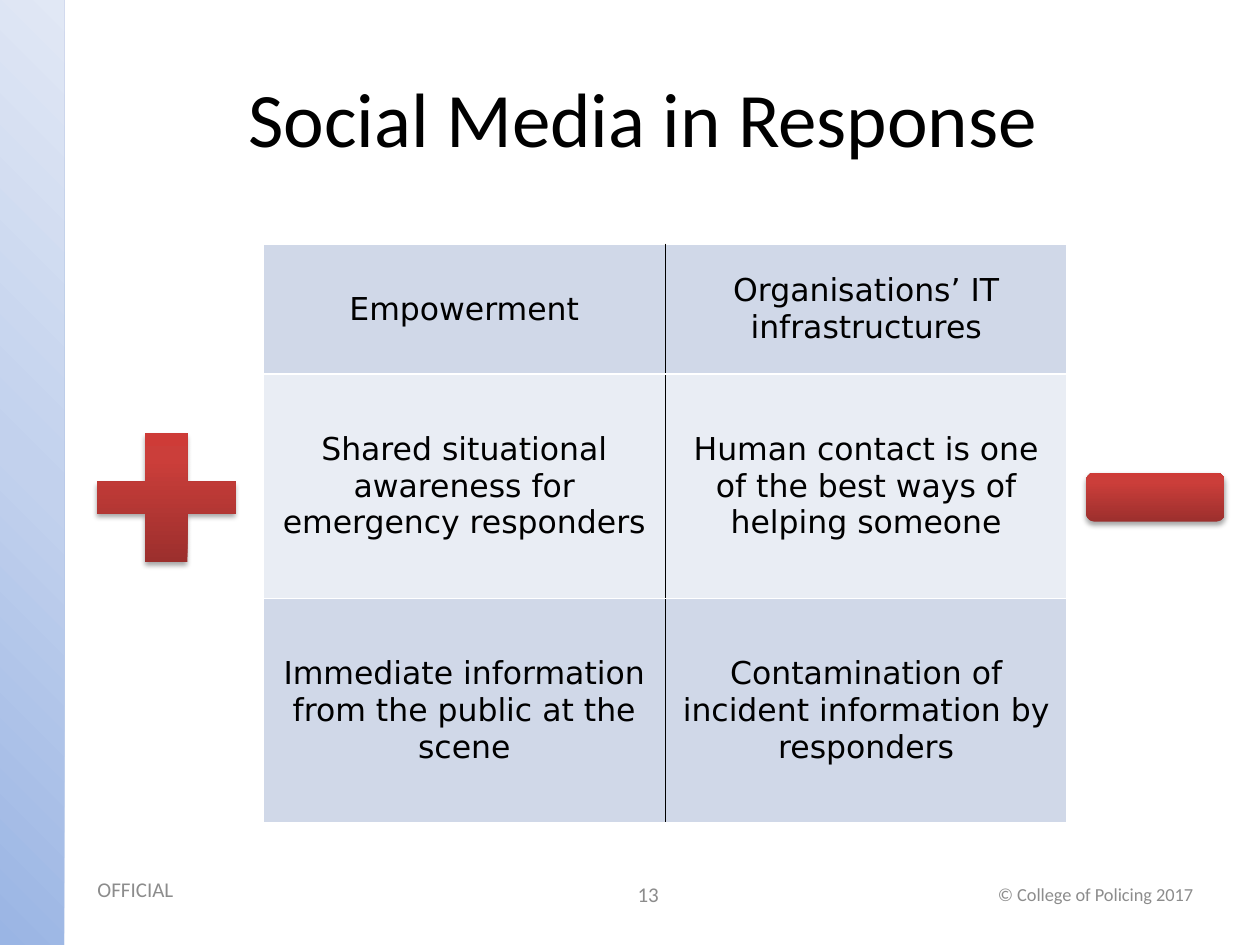
from lxml import etree
from pptx import Presentation
from pptx.dml.color import RGBColor
from pptx.enum.shapes import MSO_SHAPE as Shape
from pptx.enum.text import MSO_ANCHOR as Anchor, PP_ALIGN as Align
from pptx.oxml.ns import qn
from pptx.util import Inches, Pt

COLOURS = {
    "text": "000000", "footer": "8C8C8C", "rule": "000000", "grid": "FFFFFF",
    "row_dark": "D0D8E8", "row_light": "E9EDF4", "shadow": "000000",
}
BAND_STOPS = [(0, "9AB5E4"), (50, "C2D1ED"), (100, "E1E8F5")]
SIGN_STOPS = [(0, "9C2F2D"), (80, "CB3E3A"), (100, "CE3B37")]
ROWS = [
    ("Empowerment", "Organisations’ IT infrastructures"),
    ("Shared situational awareness for emergency responders",
     "Human contact is one of the best ways of helping someone"),
    ("Immediate information from the public at the scene",
     "Contamination of incident information by responders"),
]
ROW_HEIGHTS = [1.03, 1.78, 1.78]


def lengths(box):
    return [Inches(value) for value in box]


def write(frame, text, size, font="Calibri", colour="text", align=Align.CENTER):
    para = frame.paragraphs[0]
    para.alignment = align
    span = para.add_run()
    span.text = text
    span.font.size = Pt(size)
    span.font.name = font
    span.font.color.rgb = RGBColor.from_string(COLOURS[colour])


def add_colour(parent, colour):
    return etree.SubElement(parent, qn("a:srgbClr"), val=colour)


def add_gradient_shape(page, kind, box, stops, angle):
    shape = page.shapes.add_shape(kind, *lengths(box))
    shape.shadow.inherit = False
    shape.line.fill.background()
    shape.fill.gradient()
    shape.fill.gradient_angle = angle
    stop_list = shape._element.spPr.find(".//" + qn("a:gsLst"))
    for stop in list(stop_list):
        stop_list.remove(stop)
    for position, colour in stops:
        stop = etree.SubElement(stop_list, qn("a:gs"), pos=str(position * 1000))
        add_colour(stop, colour)
    return shape


def add_sign(page, kind, box):
    """Draw a red plus or minus with a soft shadow below it."""
    sign = add_gradient_shape(page, kind, box, SIGN_STOPS, 90)
    effects = sign._element.spPr.find(qn("a:effectLst"))
    shadow = etree.SubElement(
        effects, qn("a:outerShdw"), blurRad=str(Pt(3.1)), dist=str(Pt(1.8)),
        dir="5400000", rotWithShape="0")
    alpha = add_colour(shadow, COLOURS["shadow"])
    etree.SubElement(alpha, qn("a:alpha"), val="35000")
    return sign


def add_title(page, box, text):
    title = page.shapes.title
    title.left, title.top, title.width, title.height = lengths(box)
    title.text_frame.vertical_anchor = Anchor.MIDDLE
    write(title.text_frame, text, 44)


def set_borders(cell, column):
    """Rule the inner vertical edge in black and the other edges in white."""
    inner = "R" if column == 0 else "L"
    for side in "LRTB":
        line = etree.SubElement(
            cell._tc.get_or_add_tcPr(), qn(f"a:ln{side}"), w=str(Pt(1)))
        fill = etree.SubElement(line, qn("a:solidFill"))
        add_colour(fill, COLOURS["rule" if side == inner else "grid"])


def add_comparison(page, box):
    table = page.shapes.add_table(len(ROWS), 2, *lengths(box)).table
    table.first_row = table.horz_banding = False
    for column in table.columns:
        column.width = Inches(box[2] / 2)
    for r, texts in enumerate(ROWS):
        table.rows[r].height = Inches(ROW_HEIGHTS[r])
        for c, text in enumerate(texts):
            cell = table.cell(r, c)
            set_borders(cell, c)
            cell.fill.solid()
            shade = COLOURS["row_light" if r % 2 else "row_dark"]
            cell.fill.fore_color.rgb = RGBColor.from_string(shade)
            cell.vertical_anchor = Anchor.MIDDLE
            write(cell.text_frame, text, 18, font="DejaVu Sans")


def add_footer(page, box, text, size, wrap=True, align=Align.CENTER):
    frame = page.shapes.add_textbox(*lengths(box)).text_frame
    frame.word_wrap = wrap
    frame.vertical_anchor = Anchor.MIDDLE
    write(frame, text, size, colour="footer", align=align)


def main():
    deck = Presentation()
    deck.slide_width, deck.slide_height = Inches(10), Inches(7.5)
    page = deck.slides.add_slide(deck.slide_layouts[5])

    add_gradient_shape(page, Shape.RECTANGLE, (0, 0, 0.51, 7.5), BAND_STOPS, 45)
    add_footer(page, (0.67, 6.91, 0.81, 0.3), "OFFICIAL", 12, wrap=False)
    add_title(page, (0.67, 0.3, 8.87, 1.25), "Social Media in Response")
    add_comparison(page, (2.09, 1.94, 6.38, sum(ROW_HEIGHTS)))
    plus = add_sign(page, Shape.CROSS, (0.77, 3.44, 1.1, 1.02))
    plus.adjustments[0] = 0.375
    add_sign(page, Shape.ROUNDED_RECTANGLE, (8.62, 3.75, 1.1, 0.39))
    add_footer(page, (7.13, 6.9, 2.44, 0.4), "© College of Policing 2017", 10.5,
               align=Align.RIGHT)
    add_footer(page, (3.98, 6.9, 2.33, 0.4), "13", 12)
    deck.save("out.pptx")


if __name__ == "__main__":
    main()
